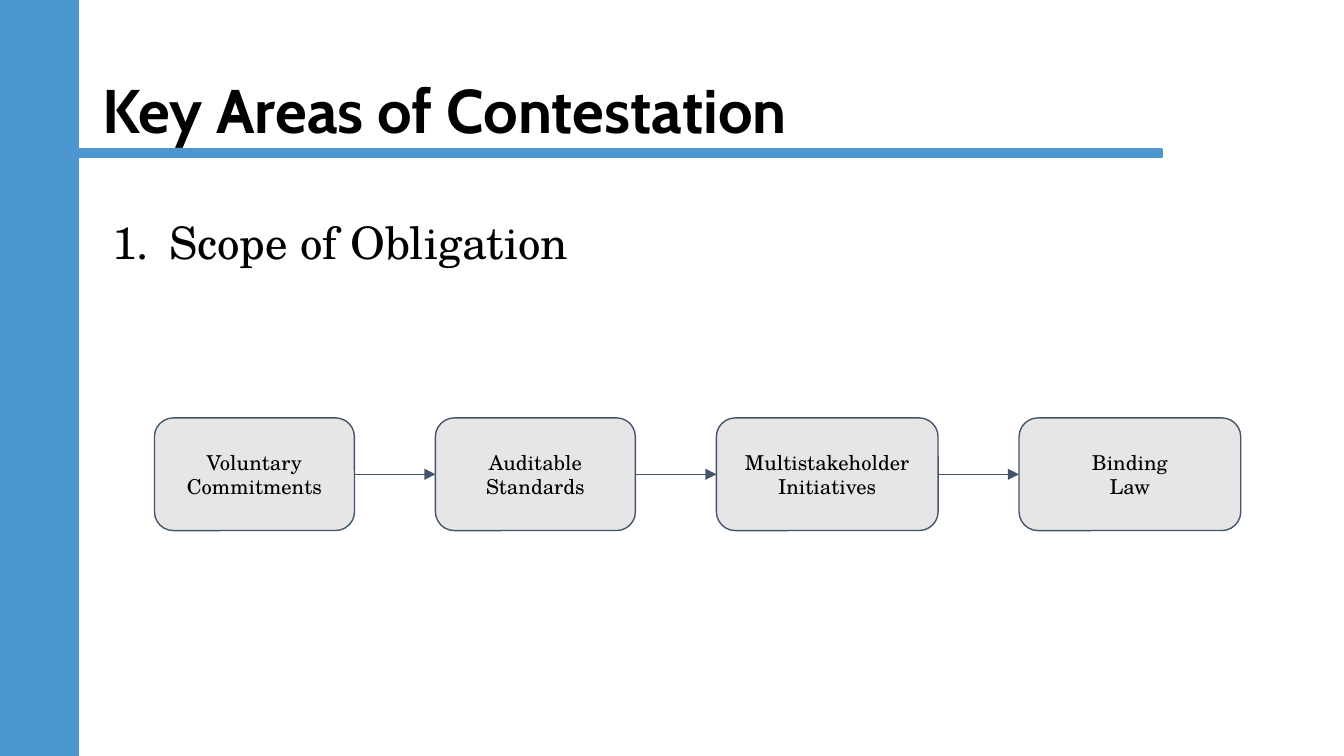
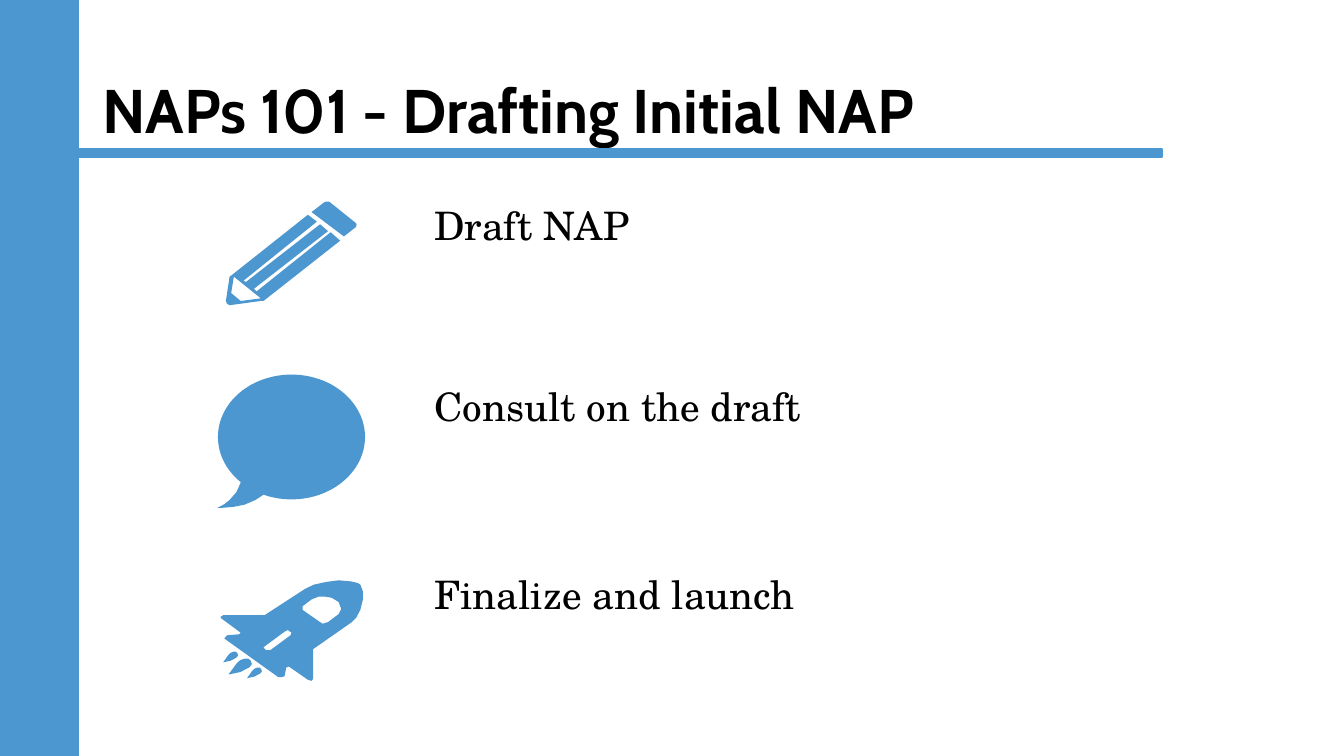
from dataclasses import dataclass
from itertools import pairwise
from math import cos, radians, sin

from lxml.etree import SubElement
from pptx import Presentation
from pptx.dml.color import RGBColor
from pptx.enum.shapes import MSO_CONNECTOR, MSO_SHAPE
from pptx.enum.text import MSO_ANCHOR, PP_ALIGN
from pptx.oxml.ns import qn
from pptx.util import Cm, Pt

SLIDE_W, SLIDE_H = 25.4, 14.29


@dataclass(frozen=True)
class Theme:
    accent: str = "4C97D0"
    box: str = "E7E6E6"
    outline: str = "44546A"
    ink: str = "000000"
    head_font: str = "Cabin"
    body_font: str = "TeX Gyre Schola"
    title: int = 33
    item: int = 24
    step: int = 21
    label: int = 11


# Icon outlines, in cm on the slide: each icon part is a list of contours.
ERASER = [[(6.17, 3.81), (6.12, 3.83), (5.89, 4.01), (6.5, 4.47), (6.73, 4.29),
           (6.74, 4.24), (6.73, 4.22), (6.22, 3.81)]]
PENCIL = [
    [(5.82, 4.06), (4.37, 5.21), (4.34, 5.23), (4.27, 5.69), (4.29, 5.74),
     (4.34, 5.77), (4.93, 5.69), (4.98, 5.69), (6.43, 4.55), (6.25, 4.39),
     (4.85, 5.51), (4.8, 5.46), (6.2, 4.37), (6.05, 4.24), (4.65, 5.33),
     (4.6, 5.31), (5.99, 4.19)],
    [(4.42, 5.23), (4.93, 5.64), (4.55, 5.69), (4.37, 5.54)],
]
ROCKET = [
    [(6.4, 10.97), (6.17, 11), (5.94, 11.05), (5.77, 11.13), (5, 11.63),
     (4.22, 11.63), (4.17, 11.66), (4.17, 11.68), (4.55, 11.96), (4.52, 11.99),
     (4.29, 12.01), (4.24, 12.07), (5.26, 12.8), (5.33, 12.8), (5.38, 12.78),
     (5.41, 12.62), (5.46, 12.6), (5.82, 12.85), (5.89, 12.87), (5.92, 12.83),
     (5.92, 12.27), (6.65, 11.76), (6.73, 11.68), (6.81, 11.53), (6.86, 11.33),
     (6.86, 11.18), (6.81, 11.05), (6.76, 11.02), (6.63, 10.99)],
    [(6.15, 11.28), (6.27, 11.3), (6.4, 11.38), (6.45, 11.51), (6.4, 11.61),
     (6.2, 11.76), (6.1, 11.79), (6.05, 11.76), (5.72, 11.53), (5.72, 11.46),
     (5.89, 11.33), (6.02, 11.28)],
    [(5.44, 11.91), (5.51, 11.96), (5.49, 12.01), (5.11, 12.29), (5.03, 12.29),
     (4.98, 12.24), (5, 12.22), (5.38, 11.94)],
]
# One flame in a unit square, and where it is drawn: left, top, width, height.
FLAME = [(0.7, 0), (0.5, 0.1), (0.35, 0.3), (0, 1), (0.5, 0.85), (0.9, 0.55),
         (1, 0.35), (0.95, 0.12), (0.85, 0)]
FLAME_PLACES = [(4.32, 12.45, 0.44, 0.3), (4.67, 12.62, 0.28, 0.2),
                (4.22, 12.32, 0.28, 0.2)]


def bubble_outline():
    """Ellipse left open at the lower left, closed by a curved tail."""
    cx, cy, rx, ry = 5.51, 8.26, 1.39, 1.18
    arc = [(cx + rx * cos(radians(a)), cy + ry * sin(radians(a)))
           for a in range(132, 472, 4)]
    tail = [(4.98, 9.35), (4.83, 9.45), (4.62, 9.54), (4.42, 9.58), (4.19, 9.6),
            (4.11, 9.6), (4.24, 9.53), (4.34, 9.45), (4.47, 9.3), (4.55, 9.12)]
    return [arc + tail]


class Deck:
    def __init__(self, theme):
        self.theme = theme
        self.prs = Presentation()
        self.prs.slide_width, self.prs.slide_height = Cm(SLIDE_W), Cm(SLIDE_H)
        self.s = None

    def slide(self, title):
        self.s = self.prs.slides.add_slide(self.prs.slide_layouts[6])
        t = self.theme
        tf = self.text_box(1.75, 0.76, 21.9, 2.77, MSO_ANCHOR.MIDDLE)
        p = tf.paragraphs[0]
        p.line_spacing = 0.9
        self.run(p, title, t.title, t.head_font, bold=True)
        for box in ((0, 0, 1.47, SLIDE_H), (0, 2.82, 21.97, 0.15)):
            self.shape(MSO_SHAPE.RECTANGLE, box, t.accent, t.accent, 1)

    def run(self, p, text, size, font=None, bold=False):
        r = p.add_run()
        r.text = text
        r.font.name = font or self.theme.body_font
        r.font.size = Pt(size)
        r.font.bold = bold
        r.font.color.rgb = RGBColor.from_string(self.theme.ink)

    def text_box(self, x, y, w, h, anchor=MSO_ANCHOR.TOP):
        tf = self.s.shapes.add_textbox(Cm(x), Cm(y), Cm(w), Cm(h)).text_frame
        tf.word_wrap = True
        tf.vertical_anchor = anchor
        tf.margin_left = tf.margin_right = Cm(0.18)
        tf.margin_top = tf.margin_bottom = Cm(0.1)
        return tf

    def numbered(self, tf, text):
        p = tf.paragraphs[0]
        p.line_spacing = 1.15
        self.run(p, text, self.theme.item)
        pPr = p._p.get_or_add_pPr()
        pPr.set("marL", str(Cm(1.27)))
        pPr.set("indent", str(Cm(-1.07)))
        SubElement(pPr, qn("a:buFont"), typeface=self.theme.body_font)
        SubElement(pPr, qn("a:buAutoNum"), type="arabicPeriod")

    def steps(self, tf, steps):
        """Steps are pairs of text and space before, in points."""
        for i, (text, gap) in enumerate(steps):
            p = tf.add_paragraph() if i else tf.paragraphs[0]
            p.line_spacing = 0.9
            p.space_before = Pt(gap)
            self.run(p, text, self.theme.step)

    def paint(self, sp, fill, line=None, width=0):
        sp.shadow.inherit = False
        sp.fill.solid()
        sp.fill.fore_color.rgb = RGBColor.from_string(fill)
        if line:
            sp.line.color.rgb = RGBColor.from_string(line)
            sp.line.width = Pt(width)
        else:
            sp.line.fill.background()

    def shape(self, kind, box, fill, line, width):
        sp = self.s.shapes.add_shape(kind, *map(Cm, box))
        self.paint(sp, fill, line, width)
        return sp

    def stage(self, box, lines):
        t = self.theme
        sp = self.shape(MSO_SHAPE.ROUNDED_RECTANGLE, box, t.box, t.outline, 0.75)
        tf = sp.text_frame
        tf.word_wrap = True
        tf.vertical_anchor = MSO_ANCHOR.MIDDLE
        tf.margin_left = tf.margin_right = Cm(0.25)
        tf.margin_top = tf.margin_bottom = Cm(0.25)
        for i, text in enumerate(lines):
            p = tf.add_paragraph() if i else tf.paragraphs[0]
            p.alignment = PP_ALIGN.CENTER
            self.run(p, text, t.label)
        return sp

    def arrow(self, source, target):
        """Arrow from the right side of one box to the left side of the next."""
        c = self.s.shapes.add_connector(MSO_CONNECTOR.STRAIGHT, 0, 0, 0, 0)
        c.begin_connect(source, 3)
        c.end_connect(target, 1)
        c.line.color.rgb = RGBColor.from_string(self.theme.outline)
        c.line.width = Pt(0.75)
        SubElement(c.line._get_or_add_ln(), qn("a:tailEnd"), type="triangle")
        SubElement(c._element.spPr, qn("a:effectLst"))

    def outline(self, contours):
        """Filled outline; every contour after the first cuts a hole."""
        contours = [[(Cm(x), Cm(y)) for x, y in c] for c in contours]
        fb = self.s.shapes.build_freeform(*contours[0][0])
        fb.add_line_segments(contours[0][1:])
        for hole in contours[1:]:
            fb.move_to(*hole[0])
            fb.add_line_segments(hole[1:])
        self.paint(fb.convert_to_shape(), self.theme.accent)


def contestation(deck):
    deck.slide("Key Areas of Contestation")
    deck.numbered(deck.text_box(1.75, 3.81, 23.06, 9.07), "Scope of Obligation")
    stages = [
        (3.78, ["Voluntary Commitments"]),
        (3.78, ["Auditable Standards"]),
        (4.19, ["Multistakeholder", "Initiatives"]),
        (4.19, ["Binding", "Law"]),
    ]
    x, gap = 2.92, 1.53
    boxes = []
    for width, lines in stages:
        boxes.append(deck.stage((x, 7.9, width, 2.13), lines))
        x += width + gap
    for source, target in pairwise(boxes):
        deck.arrow(source, target)


def drafting(deck):
    deck.slide("NAPs 101 - Drafting Initial NAP")
    deck.steps(deck.text_box(8.03, 3.81, 15.98, 9.07), [
        ("Draft NAP", 5),
        ("Consult on the draft", 74),
        ("Finalize and launch", 78),
    ])
    flames = [[[(x + w * u, y + h * v) for u, v in FLAME]]
              for x, y, w, h in FLAME_PLACES]
    for part in (ERASER, PENCIL, bubble_outline(), ROCKET, *flames):
        deck.outline(part)


def main():
    deck = Deck(Theme())
    contestation(deck)
    drafting(deck)
    deck.prs.save("out.pptx")


if __name__ == "__main__":
    main()
